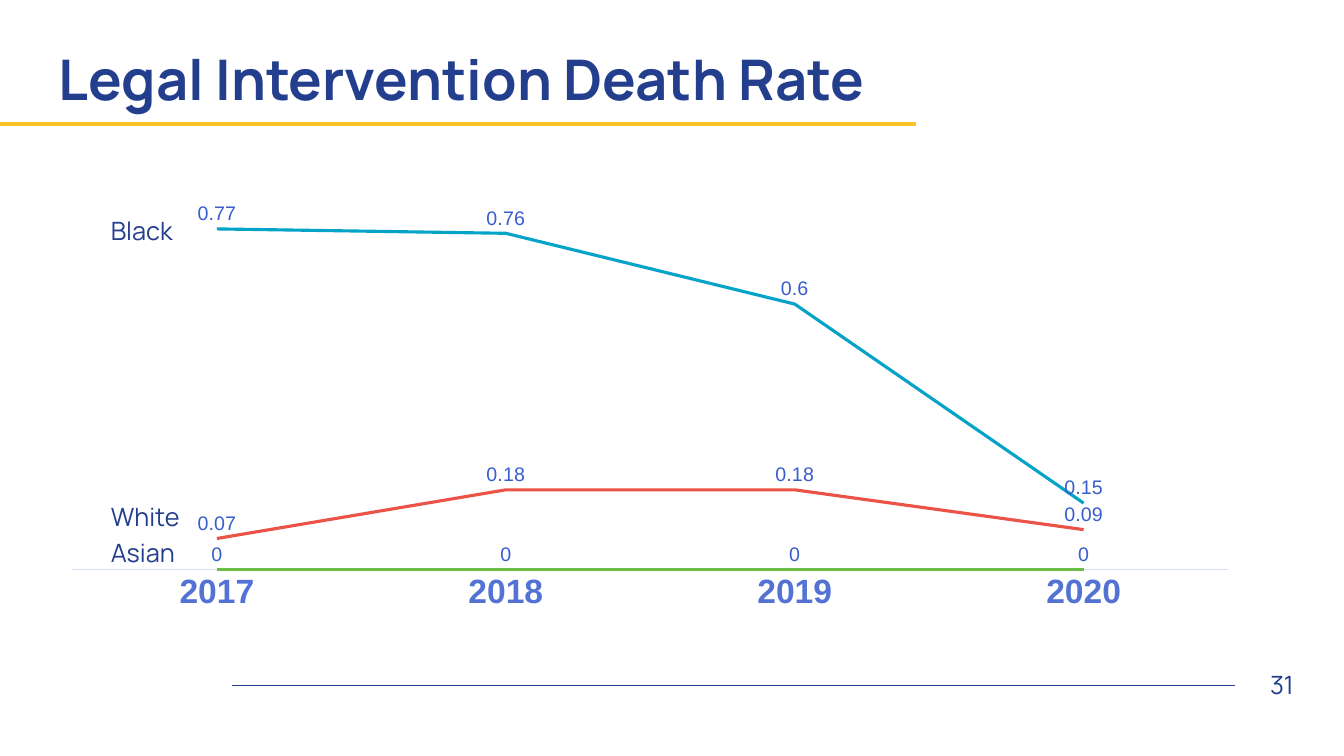
from lxml import etree
from pptx import Presentation
from pptx.chart.data import CategoryChartData as Data
from pptx.dml.color import RGBColor as RGB
from pptx.enum.chart import XL_CHART_TYPE as Kind, XL_LABEL_POSITION as Pos, XL_TICK_MARK as Tick
from pptx.enum.shapes import MSO_CONNECTOR as Conn
from pptx.enum.text import MSO_ANCHOR as Anchor, PP_ALIGN as Align
from pptx.oxml import parse_xml
from pptx.oxml.ns import nsdecls, qn
from pptx.util import Inches, Pt

COLORS = {"navy": "243E8E", "gold": "F7C327", "label": "385DCD", "year": "5372D3",
          "axis": "D7DFF5", "red": "EB5347", "cyan": "06A3C9", "green": "6CBD45"}
YEARS = ["2017", "2018", "2019", "2020"]
RATES = [("Series 1", "red", [0.07, 0.18, 0.18, 0.09]),
         ("Series 2", "cyan", [0.77, 0.76, 0.6, 0.15]),
         ("Series 3", "green", [0, 0, 0, 0])]
GROUPS = [("Black", 2.09), ("White", 4.92), ("Asian", 5.28)]


def set_font(font, size, color="navy", name="Manrope", bold=False):
    font.size, font.name, font.bold = Pt(size), name, bold
    font.color.rgb = RGB.from_string(COLORS[color])


def set_line(line, color, width):
    line.color.rgb = RGB.from_string(COLORS[color])
    line.width = Pt(width)


def write(frame, text, size=18, bold=False, align=Align.LEFT, anchor=Anchor.TOP, space=1.0):
    frame.word_wrap = True
    frame.vertical_anchor = anchor
    par = frame.paragraphs[0]
    par.alignment, par.line_spacing = align, space
    run = par.add_run()
    run.text = text
    set_font(run.font, size, bold=bold)


class Deck:
    def __init__(self):
        self.prs = Presentation()
        self.prs.slide_width, self.prs.slide_height = Inches(13.33), Inches(7.5)
        self.slide = self.prs.slides.add_slide(self.prs.slide_layouts[5])

    def title(self, text, *box):
        shape = self.slide.shapes.title
        shape.left, shape.top, shape.width, shape.height = map(Inches, box)
        write(shape.text_frame, text, 40, True, anchor=Anchor.MIDDLE, space=0.9)

    def text(self, text, *box, **style):
        shape = self.slide.shapes.add_textbox(*map(Inches, box))
        write(shape.text_frame, text, **style)

    def rule(self, left, right, top, color, width):
        ends = map(Inches, (left, top, right, top))
        line = self.slide.shapes.add_connector(Conn.STRAIGHT, *ends)
        set_line(line.line, color, width)
        etree.SubElement(line._element.spPr, qn("a:effectLst"))

    def chart(self, *box):
        data = Data()
        data.categories = YEARS
        for name, _, rates in RATES:
            data.add_series(name, rates)
        chart = self.slide.shapes.add_chart(Kind.LINE, *map(Inches, box), data).chart
        chart.has_legend = chart.has_title = False
        set_font(chart.font, 10, name="Arial")
        self.axes(chart)
        for series, (_, color, _) in zip(chart.plots[0].series, RATES):
            series.smooth = False
            set_line(series.format.line, color, 2.25)
            labels = series.data_labels
            labels.show_value, labels.position = True, Pos.ABOVE
            set_font(labels.font, 14, "label", "Arial")
        chart.plots[0].vary_by_categories = False
        self.place(chart, x=0.02, y=0.02, w=0.96, h=0.87)

    def axes(self, chart):
        years, rates = chart.category_axis, chart.value_axis
        years.major_tick_mark = years.minor_tick_mark = Tick.NONE
        set_font(years.tick_labels.font, 24, "year", "Arial", True)
        set_line(years.format.line, "axis", 0.75)
        rates.visible = rates.has_major_gridlines = False
        rates.minimum_scale, rates.maximum_scale = 0, 0.9

    def place(self, chart, **part):
        """Fix the inner plot area as fractions of the chart."""
        area = chart.plots[0]._element.getparent()
        for old in area.findall(qn("c:layout")):
            area.remove(old)
        tags = '<c:layoutTarget val="inner"/><c:xMode val="edge"/><c:yMode val="edge"/>'
        tags += "".join(f'<c:{key} val="{val}"/>' for key, val in part.items())
        area.insert(0, parse_xml(f'<c:layout {nsdecls("c")}><c:manualLayout>{tags}'
                                 '</c:manualLayout></c:layout>'))


def main():
    deck = Deck()
    deck.rule(2.3, 12.25, 6.8, "navy", 1)
    deck.rule(0, 9.09, 1.23, "gold", 3)
    deck.title("Legal Intervention Death Rate", 0.48, 0.4, 11.94, 0.83)
    deck.text("31", 12.25, 6.59, 0.68, 0.4, align=Align.RIGHT, anchor=Anchor.MIDDLE)
    deck.chart(0.48, 1.61, 11.94, 4.54)
    for group, top in GROUPS:
        deck.text(group, 1, top, 0.95, 0.4)
    deck.prs.save("out.pptx")


if __name__ == "__main__":
    main()
